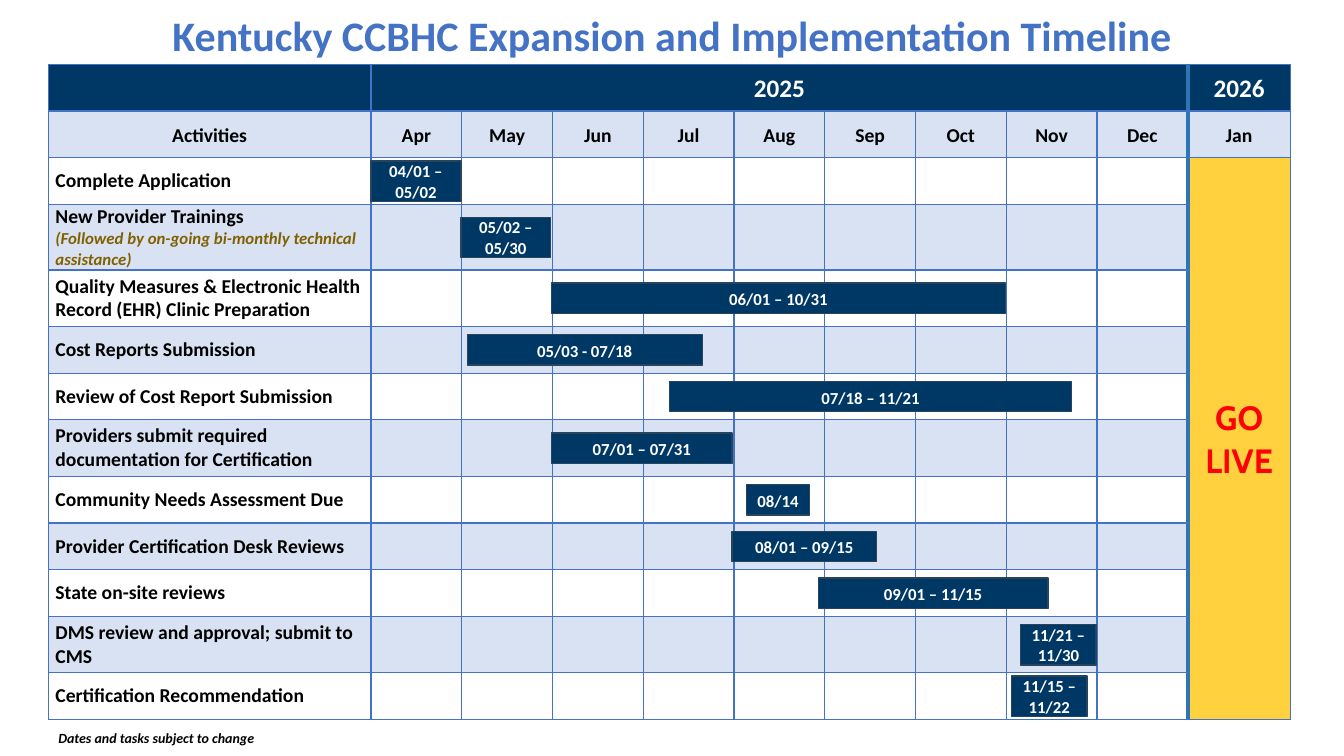
from itertools import accumulate
from lxml import etree
from pptx import Presentation, util as u
from pptx.dml.color import RGBColor
from pptx.enum import shapes, text
from pptx.oxml.ns import qn

HUES = {"navy": "003865", "blue": "4472C4", "edge": "2E75B6", "rim": "28445D", "gold": "FFD13F",
        "brown": "806000", "red": "FF0000", "white": "FFFFFF", "black": "000000"}
MONTHS = "Apr May Jun Jul Aug Sep Oct Nov Dec Jan".split()
TASKS = [
    ("Complete Application", 0, 0.99, "04/01 –\n05/02"),
    ("New Provider Trainings\n(Followed by on-going bi-monthly technical assistance)", 0.99, 0.99, "05/02 –\n05/30"),
    ("Quality Measures & Electronic Health Record (EHR) Clinic Preparation", 1.99, 5, "06/01 – 10/31"),
    ("Cost Reports Submission", 1.06, 2.59, "05/03 - 07/18"),
    ("Review of Cost Report Submission", 3.29, 4.43, "07/18 – 11/21"),
    ("Providers submit required documentation for Certification", 1.99, 1.99, "07/01 – 07/31"),
    ("Community Needs Assessment Due", 4.14, 0.69, "08/14"),
    ("Provider Certification Desk Reviews", 3.98, 1.59, "08/01 – 09/15"),
    ("State on-site reviews", 4.93, 2.53, "09/01 – 11/15"),
    ("DMS review and approval; submit to CMS", 7.16, 0.83, "11/21 –\n11/30"),
    ("Certification Recommendation", 7.06, 0.83, "11/15 –\n11/22"),
]
LEFT, TOP, MONTH, FULL = 0.48, 0.64, 0.9, 6.5
COLS = [3.2] + [MONTH] * 9 + [1.02]
TALL = {3: 0.65, 4: 0.56, 7: 0.56, 11: 0.56}
BASE = (FULL - sum(TALL.values())) / 9
ROWS = [TALL.get(i, BASE) for i in range(13)]
TOPS = list(accumulate(ROWS, initial=TOP))


def tint(name):
    return RGBColor.from_string(HUES[name])


class Chart:
    def __init__(self, deck):
        self.slide = deck.slides.add_slide(deck.slide_layouts[5])
        self.font = "Calibri"

    def label(self, frame, words, size, hue, align="CENTER", lead=None, font=None, slant=False):
        frame.text = words
        for para in frame.paragraphs:
            para.alignment = text.PP_ALIGN[align]
            if lead:
                para.line_spacing = lead
            for run in para.runs:
                run.font.name = font or self.font
                run.font.size = u.Pt(size)
                run.font.bold = True
                run.font.italic = slant
                run.font.color.rgb = tint(hue)

    def title(self, words):
        box = self.slide.shapes.title
        box.left, box.top, box.width, box.height = map(u.Inches, (0.01, 0.04, 13.32, 0.61))
        self.label(box.text_frame, words, 30, "blue")
        box.text_frame.vertical_anchor = text.MSO_ANCHOR.TOP

    def note(self, words):
        box = self.slide.shapes.add_textbox(*map(u.Inches, (LEFT, TOPS[-1] + 0.05, 2.17, 0.27)))
        box.text_frame.word_wrap = False
        self.label(box.text_frame, words, 10, "black", "LEFT", slant=True)

    def border(self, cell, side, hue, width):
        line = etree.SubElement(cell._tc.get_or_add_tcPr(), qn("a:ln" + side), w=str(u.Pt(width)))
        fill = etree.SubElement(line, qn("a:solidFill"))
        etree.SubElement(fill, qn("a:srgbClr"), val=HUES[hue])

    def paint(self, cell, row, col):
        for side in "LRTB":
            thick = (side, col) in (("R", 9), ("L", 10))
            rule = (side, row) in (("B", 0), ("T", 1))
            self.border(cell, side, "edge" if thick else "blue", 3 if thick else 2 if rule else 1)
        if row > 1 and col < 10 and row % 2 == 0:
            cell.fill.background()
            return
        cell.fill.solid()
        hue = "navy" if row == 0 else "gold" if row > 1 and col == 10 else "blue"
        cell.fill.fore_color.rgb = tint(hue)
        if hue == "blue":
            shade = cell._tc.tcPr.find(qn("a:solidFill")).find(qn("a:srgbClr"))
            etree.SubElement(shade, qn("a:alpha"), val="20000")

    def table(self):
        size = map(u.Inches, (LEFT, TOP, sum(COLS), FULL))
        grid = self.slide.shapes.add_table(len(ROWS), len(COLS), *size).table
        grid.first_row = grid.horz_banding = False
        for col, width in zip(grid.columns, COLS):
            col.width = u.Inches(width)
        for row, height in zip(grid.rows, ROWS):
            row.height = u.Inches(height)
        for r in range(len(ROWS)):
            for c in range(len(COLS)):
                cell = grid.cell(r, c)
                cell.margin_left = cell.margin_right = u.Inches(0.07)
                cell.margin_top = cell.margin_bottom = 0
                cell.vertical_anchor = text.MSO_ANCHOR.MIDDLE
                self.paint(cell, r, c)
        grid.cell(0, 1).merge(grid.cell(0, 9))
        grid.cell(2, 10).merge(grid.cell(12, 10))
        for c, year in ((1, "2025"), (10, "2026")):
            self.label(grid.cell(0, c).text_frame, year, 18, "white", lead=1.07)
        for c, name in enumerate(["Activities"] + MONTHS):
            self.label(grid.cell(1, c).text_frame, name, 14, "black", lead=1.07)
        for r, task in enumerate(TASKS, 2):
            frame = grid.cell(r, 0).text_frame
            self.label(frame, task[0], 14, "black", "LEFT")
            for para in frame.paragraphs[1:]:
                font = para.runs[0].font
                font.size, font.italic, font.color.rgb = u.Pt(12), True, tint("brown")
        self.label(grid.cell(2, 10).text_frame, "GO LIVE", 24, "red", lead=1.07, font="Cabin")

    def bar(self, row, start, span, words):
        lines = words.count("\n")
        height = 0.4 if lines else 0.3
        top = TOPS[row] + (ROWS[row] - height) / 2
        place = (LEFT + COLS[0] + start * MONTH, top, span * MONTH, height)
        box = self.slide.shapes.add_shape(shapes.MSO_SHAPE.RECTANGLE, *map(u.Inches, place))
        box.shadow.inherit = False
        box.fill.solid()
        box.fill.fore_color.rgb = tint("navy")
        box.line.color.rgb = tint("rim")
        box.line.width = u.Pt(1)
        box.text_frame.vertical_anchor = text.MSO_ANCHOR.MIDDLE
        self.label(box.text_frame, words, 12, "white", lead=None if lines else 1.07)


def main():
    deck = Presentation()
    deck.slide_width, deck.slide_height = u.Inches(13.33), u.Inches(7.5)
    chart = Chart(deck)
    chart.title("Kentucky CCBHC Expansion and Implementation Timeline")
    chart.note("Dates and tasks subject to change")
    chart.table()
    for row, (_, start, span, dates) in enumerate(TASKS, 2):
        chart.bar(row, start, span, dates)
    deck.save("out.pptx")


if __name__ == "__main__":
    main()
